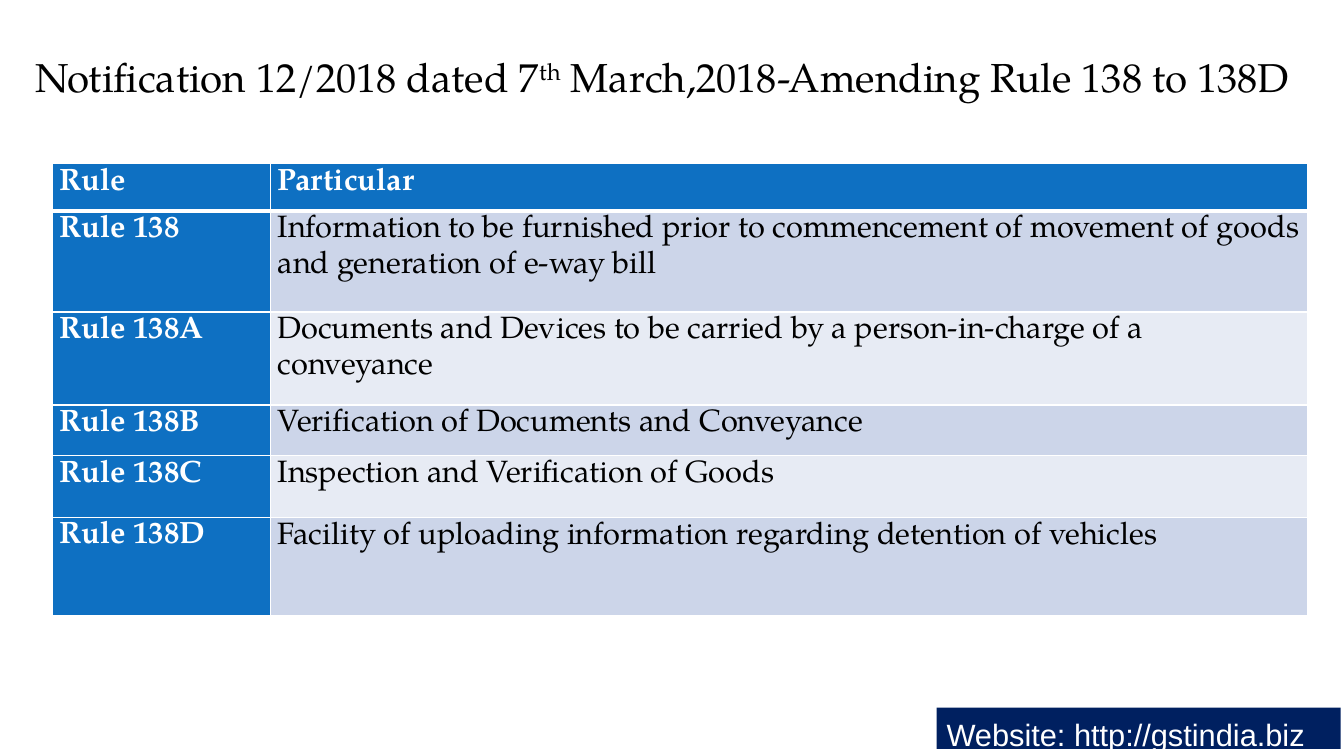
from dataclasses import dataclass

from lxml.etree import SubElement
from pptx import Presentation
from pptx.dml.color import RGBColor
from pptx.enum.shapes import MSO_SHAPE
from pptx.enum.text import MSO_ANCHOR, PP_ALIGN
from pptx.oxml.ns import qn
from pptx.util import Pt

SERIF, SANS = "TeX Gyre Pagella", "Arial"
WHITE, BLACK, NAVY, BLUE = "FFFFFF", "000000", "002060", "0E70C2"
BANDS = ("CCD5E9", "E7EBF4")
COLUMN_WIDTHS = (155.7, 740.9)


@dataclass
class RuleRow:
    rule: str
    particular: str
    height: float


ROWS = [
    RuleRow("Rule", "Particular", 33.8),
    RuleRow("Rule 138", "Information to be furnished prior to commencement of movement "
            "of goods and generation of e-way bill", 72.3),
    RuleRow("Rule 138A", "Documents and Devices to be carried by a person-in-charge "
            "of a conveyance", 66.4),
    RuleRow("Rule 138B", "Verification of Documents and Conveyance", 36),
    RuleRow("Rule 138C", "Inspection and Verification of Goods", 44.2),
    RuleRow("Rule 138D", "Facility of uploading information regarding detention "
            "of vehicles", 70.3),
]


def color(value: str) -> RGBColor:
    return RGBColor.from_string(value)


def paint(target, value: str) -> None:
    target.fill.solid()
    target.fill.fore_color.rgb = color(value)


def add_text(para, text: str, *, size: float = 22, font: str = SERIF, ink: str = BLACK,
             bold: bool = False, spacing: float = 1.15, raised: bool = False) -> None:
    para.alignment = PP_ALIGN.LEFT
    para.line_spacing = spacing
    span = para.add_run()
    span.text = text
    span.font.size = Pt(size)
    span.font.name = font
    span.font.bold = bold
    span.font.color.rgb = color(ink)
    if raised:
        span.font._element.set("baseline", "30000")


def set_borders(cell, widths: dict[str, float]) -> None:
    properties = cell._tc.get_or_add_tcPr()
    for index, (side, width) in enumerate(widths.items()):
        line = properties.makeelement(qn(f"a:{side}"), {"w": str(Pt(width))})
        properties.insert(index, line)
        fill = SubElement(line, qn("a:solidFill"))
        SubElement(fill, qn("a:srgbClr"), val=WHITE)


def add_title(slide) -> None:
    title = slide.shapes.title
    title.left, title.top, title.width, title.height = Pt(18), Pt(15), Pt(924.5), Pt(61.2)
    title.text_frame.vertical_anchor = MSO_ANCHOR.BOTTOM
    para = title.text_frame.paragraphs[0]
    for text, raised in (("Notification 12/2018 dated 7", False), ("th", True),
                         (" March,2018-Amending Rule 138 to 138D", False)):
        add_text(para, text, size=28.8, spacing=0.9, raised=raised)


def add_rule_table(slide) -> None:
    frame = slide.shapes.add_table(len(ROWS), len(COLUMN_WIDTHS), Pt(37.5), Pt(116.8),
                                   Pt(sum(COLUMN_WIDTHS)), Pt(sum(row.height for row in ROWS)))
    table = frame.table
    table.first_col = True
    for column, width in zip(table.columns, COLUMN_WIDTHS):
        column.width = Pt(width)
    for row_index, row in enumerate(ROWS):
        table.rows[row_index].height = Pt(row.height)
        for column_index, text in enumerate((row.rule, row.particular)):
            cell = table.cell(row_index, column_index)
            heading = row_index == 0 or column_index == 0
            cell.margin_left = cell.margin_right = Pt(5.2)
            cell.margin_top = cell.margin_bottom = 0
            paint(cell, BLUE if heading else BANDS[(row_index - 1) % 2])
            set_borders(cell, {"lnL": 1, "lnR": 1, "lnT": 3 if row_index == 1 else 1,
                               "lnB": 3 if row_index == 0 else 1})
            add_text(cell.text_frame.paragraphs[0], text,
                     ink=WHITE if heading else BLACK, bold=heading)


def add_website_box(slide) -> None:
    box = slide.shapes.add_shape(MSO_SHAPE.RECTANGLE, Pt(669), Pt(505.5), Pt(288.7), Pt(29.5))
    box.shadow.inherit = False
    paint(box, NAVY)
    box.line.fill.background()
    box.text_frame.word_wrap = True
    box.text_frame.vertical_anchor = MSO_ANCHOR.TOP
    add_text(box.text_frame.paragraphs[0], "Website: http://gstindia.biz",
             font=SANS, ink=WHITE, spacing=1.07)


def main() -> None:
    deck = Presentation()
    deck.slide_width, deck.slide_height = Pt(960), Pt(540)
    page = deck.slides.add_slide(deck.slide_layouts[5])
    add_title(page)
    add_website_box(page)
    add_rule_table(page)
    deck.save("out.pptx")


if __name__ == "__main__":
    main()
